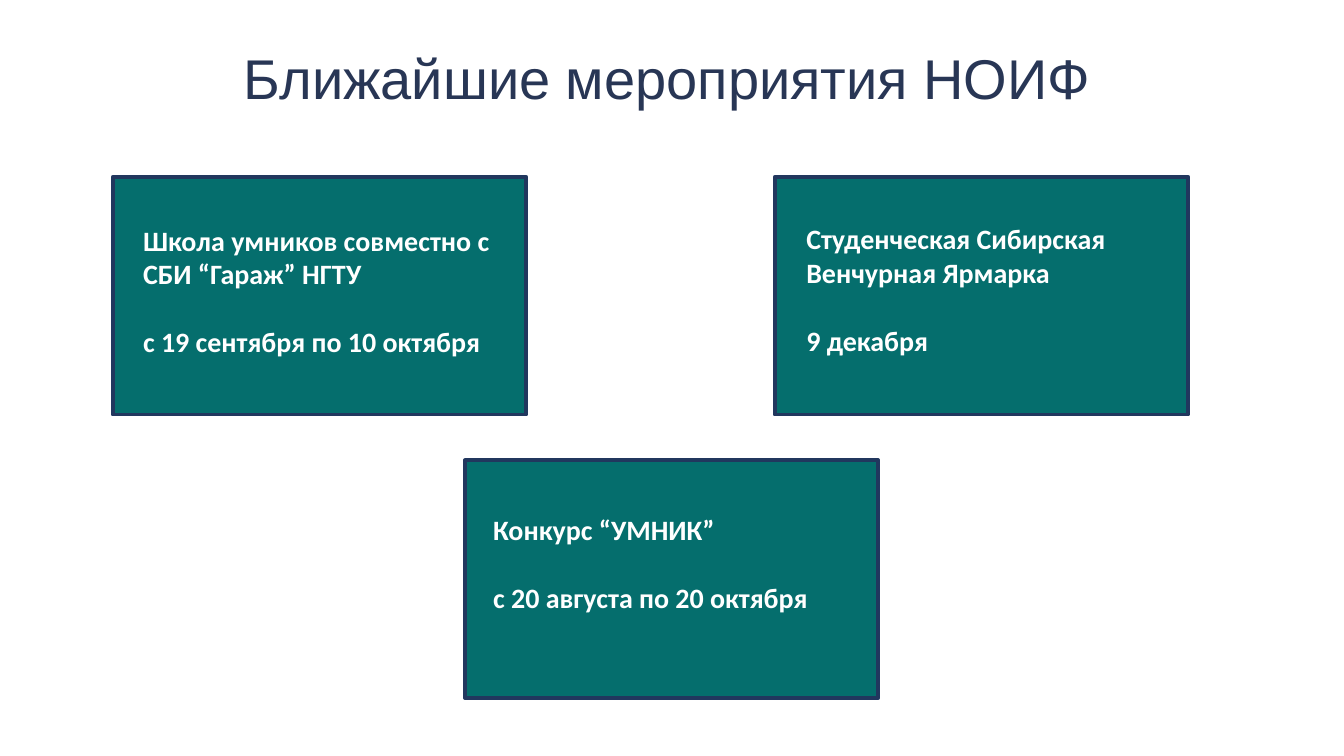
from pptx import Presentation
from pptx.dml.color import RGBColor
from pptx.enum.shapes import MSO_SHAPE as Shape
from pptx.enum.text import MSO_ANCHOR as Anchor, PP_ALIGN as Align
from pptx.util import Inches, Pt

COLORS = {"title": "283655", "card": "056E6D", "border": "21375E", "text": "FFFFFF"}
SLIDE_WIDTH, SLIDE_HEIGHT = 20, 11.25
CARD_WIDTH, CARD_HEIGHT = 6.15, 3.54
TEXT_WIDTH = 5.51
LINE_HEIGHT = 36.6
TOP_ROW, BOTTOM_ROW = 2.63, 6.85

EVENTS = [
    ((1.68, TOP_ROW), (0.35, 0.64), 2.12,
     "Школа умников совместно с СБИ “Гараж” НГТУ", "с 19 сентября по 10 октября"),
    ((11.53, TOP_ROW), (0.37, 0.62), 2.12,
     "Студенческая Сибирская Венчурная Ярмарка", "9 декабря"),
    ((6.92, BOTTOM_ROW), (0.32, 0.73), 1.62,
     "Конкурс “УМНИК”", "с 20 августа по 20 октября"),
]


def color(name):
    return RGBColor.from_string(COLORS[name])


def apply(target, values):
    for name, value in values.items():
        setattr(target, name, value)


def add_title(page, box, text):
    title = page.shapes.title
    apply(title, dict(zip(("left", "top", "width", "height"), map(Inches, box))))
    frame = title.text_frame
    frame.text = text
    apply(frame, {"word_wrap": True, "vertical_anchor": Anchor.TOP,
                  "margin_top": Inches(0.13), "margin_bottom": 0})
    para = frame.paragraphs[0]
    apply(para, {"alignment": Align.LEFT, "line_spacing": 1.0, "space_before": Pt(0)})
    apply(para.font, {"size": Pt(60), "name": "Arial"})
    para.font.color.rgb = color("title")


def add_event(page, corner, offset, text_height, name, date):
    left, top = corner
    card = page.shapes.add_shape(
        Shape.RECTANGLE, *map(Inches, (left, top, CARD_WIDTH, CARD_HEIGHT)))
    card.shadow.inherit = False
    card.fill.solid()
    card.fill.fore_color.rgb = color("card")
    card.line.color.rgb = color("border")
    card.line.width = Pt(4)

    box = page.shapes.add_textbox(
        *map(Inches, (left + offset[0], top + offset[1], TEXT_WIDTH, text_height)))
    frame = box.text_frame
    frame.word_wrap = True
    for index, text in enumerate((name, date)):
        para = frame.add_paragraph() if index else frame.paragraphs[0]
        para.text = text
        apply(para, {"alignment": Align.LEFT, "space_before": Pt(LINE_HEIGHT * index)})
        apply(para.font, {"size": Pt(30), "name": "Calibri", "bold": True})
        para.font.color.rgb = color("text")


def main():
    deck = Presentation()
    deck.slide_width, deck.slide_height = Inches(SLIDE_WIDTH), Inches(SLIDE_HEIGHT)
    page = deck.slides.add_slide(deck.slide_layouts[5])
    add_title(page, (3.52, 0.51, 14.17, 1.11), "Ближайшие мероприятия НОИФ")
    for event in EVENTS:
        add_event(page, *event)
    deck.save("out.pptx")


if __name__ == "__main__":
    main()
